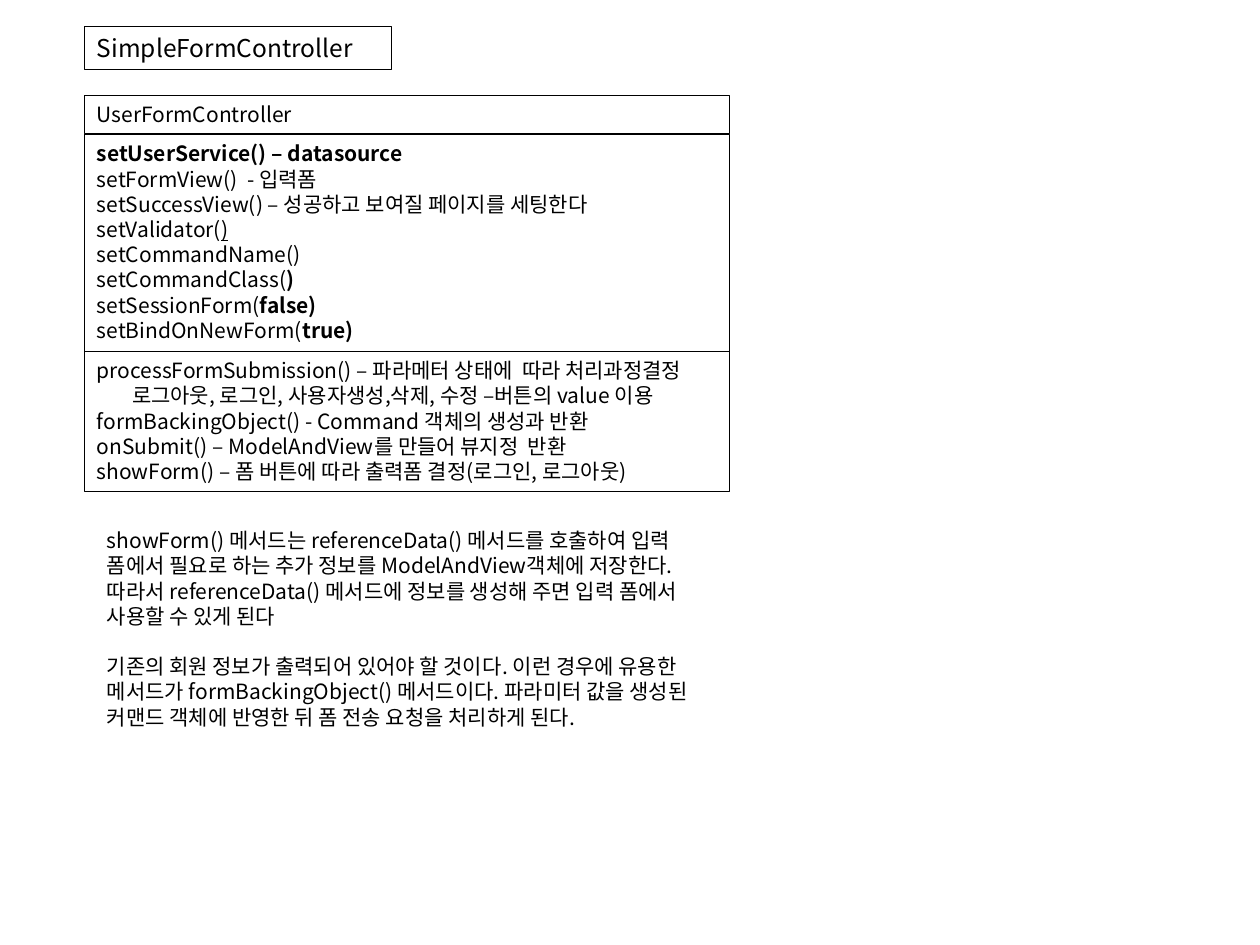
import dataclasses

import lxml.etree
import pptx
import pptx.dml.color
import pptx.enum.shapes
import pptx.enum.text
import pptx.oxml.ns
import pptx.util


@dataclasses.dataclass(frozen=True)
class Theme:
    font: str = "Noto Sans CJK KR"
    ink: pptx.dml.color.RGBColor = pptx.dml.color.RGBColor(0, 0, 0)
    title: int = 14
    body: int = 12
    leading: float = 1.2
    border: float = 0.75


THEME = Theme()
WIDTH, HEIGHT = pptx.util.Inches(10), pptx.util.Inches(7.5)
COLUMNS = ROWS = 100
LEFT, CLASS_WIDTH = 6.7, 51.2

SETTERS = [
    [("setUserService() – datasource", "b")],
    [("setFormView()  - 입력폼", "")],
    [("setSuccessView() – 성공하고 보여질 페이지를 세팅한다", "")],
    [("setValidator(", ""), (")", "u")],
    [("setCommandName()", "")],
    [("setCommandClass(", ""), (")", "b")],
    [("setSessionForm(", ""), ("false)", "b")],
    [("setBindOnNewForm(", ""), ("true)", "b")],
]
METHODS = [
    [("processFormSubmission() – 파라메터 상태에  따라 처리과정결정", "")],
    [("로그아웃, 로그인, 사용자생성,삭제, 수정 –버튼의 value 이용", "")],
    [("formBackingObject() - Command 객체의 생성과 반환", "")],
    [("onSubmit() – ModelAndView를 만들어 뷰지정  반환", "")],
    [("showForm() – 폼 버튼에 따라 출력폼 결정(로그인, 로그아웃)", "")],
]
NOTES = [
    [("showForm() 메서드는 referenceData() 메서드를 호출하여 입력 폼에서 필요로 하는 "
      "추가 정보를 ModelAndView객체에 저장한다. 따라서 referenceData() 메서드에 정보를 "
      "생성해 주면 입력 폼에서 사용할 수 있게 된다", "")],
    [("기존의 회원 정보가 출력되어 있어야 할 것이다. 이런 경우에 유용한 메서드가 "
      "formBackingObject() 메서드이다. 파라미터 값을 생성된 커맨드 객체에 반영한 뒤 "
      "폼 전송 요청을 처리하게 된다.", "")],
]


def grid(col, row, cols, rows):
    return (round(WIDTH * col / COLUMNS), round(HEIGHT * row / ROWS),
            round(WIDTH * cols / COLUMNS), round(HEIGHT * rows / ROWS))


def add_run(p, text, style, size):
    r = p.add_run()
    r.text = text
    r.font.name = THEME.font
    r.font.size = pptx.util.Pt(size)
    r.font.color.rgb = THEME.ink
    r.font.bold = "b" in style
    r.font.underline = "u" in style
    ea = lxml.etree.Element(pptx.oxml.ns.qn("a:ea"), typeface=THEME.font)
    r.font._element.find(pptx.oxml.ns.qn("a:latin")).addnext(ea)


def fill_text(sp, lines, size):
    tf = sp.text_frame
    tf.word_wrap = True
    tf.vertical_anchor = pptx.enum.text.MSO_ANCHOR.TOP
    for i, runs in enumerate(lines):
        p = tf.add_paragraph() if i else tf.paragraphs[0]
        p.alignment = pptx.enum.text.PP_ALIGN.LEFT
        p.line_spacing = pptx.util.Pt(size * THEME.leading)
        for text, style in runs:
            add_run(p, text, style, size)
    return tf


def add_box(shapes, area, lines, size):
    sp = shapes.add_shape(pptx.enum.shapes.MSO_SHAPE.RECTANGLE, *grid(*area))
    sp.shadow.inherit = False
    sp.fill.background()
    sp.line.color.rgb = THEME.ink
    sp.line.width = pptx.util.Pt(THEME.border)
    return fill_text(sp, lines, size)


def add_class(slide):
    shapes = slide.shapes.add_group_shape().shapes
    compartments = [
        (10.13, 4, [[("UserFormController", "")]]),
        (14.27, 22.93, SETTERS),
        (37.2, 14.8, METHODS),
    ]
    for top, rows, lines in compartments:
        tf = add_box(shapes, (LEFT, top, CLASS_WIDTH, rows), lines, THEME.body)
    indent = round(WIDTH * 2.8 / COLUMNS)
    tf.paragraphs[1]._p.get_or_add_pPr().set("marL", str(indent))


def add_notes(slide):
    sp = slide.shapes.add_textbox(*grid(7.5, 55.2, 50, 22.93))
    tf = fill_text(sp, NOTES, THEME.body)
    tf.paragraphs[1].space_before = pptx.util.Pt(THEME.body * THEME.leading)


def main():
    prs = pptx.Presentation()
    prs.slide_width, prs.slide_height = WIDTH, HEIGHT
    slide = prs.slides.add_slide(prs.slide_layouts[6])
    add_class(slide)
    add_box(slide.shapes, (LEFT, 2.8, 24.4, 4.53),
            [[("SimpleFormController", "")]], THEME.title)
    add_notes(slide)
    prs.save("out.pptx")


if __name__ == "__main__":
    main()
